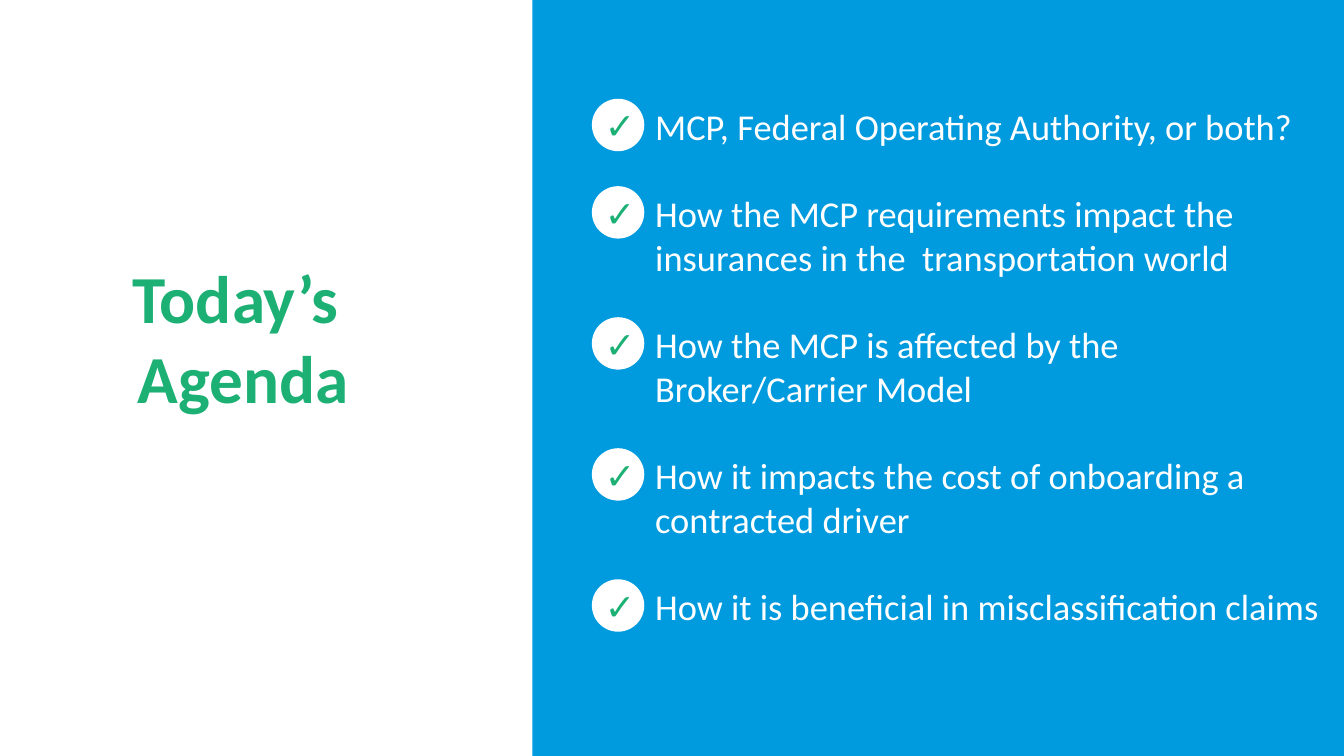
import pptx
import pptx.util
import pptx.dml.color
import pptx.enum.shapes
import pptx.enum.text
from lxml import etree

# Content
TITLE = ["Today’s ", "Agenda"]
AGENDA = [  # text, number of lines it fills
    ("MCP, Federal Operating Authority, or both?\u00a0", 1),
    ("How the MCP requirements impact the insurances in the\u00a0\u00a0transportation world", 2),
    ("How the MCP is affected by the Broker/Carrier Model", 2),
    ("How it impacts the cost of onboarding a contracted driver", 2),
    ("How it is beneficial in misclassification claims", 1),
]
COLORS = {"green": "1DB075", "blue": "009ADE", "white": "FFFFFF"}
FONT = "Calibri"

# Layout, in inches
WIDTH, HEIGHT = 13.33, 7.5
PANEL_LEFT = 5.28
DISC_LEFT, DISC_TOP, DISC = 5.87, 0.98, 0.52
LINE = 31.2 / 72  # height of one agenda line
INDENT = 0.5

inch = pptx.util.Inches
shapes_enum = pptx.enum.shapes.MSO_SHAPE

prs = pptx.Presentation()
prs.slide_width, prs.slide_height = inch(WIDTH), inch(HEIGHT)
s = prs.slides.add_slide(prs.slide_layouts[6])


def rgb(name):
    return pptx.dml.color.RGBColor.from_string(COLORS[name])


def add_filled(kind, left, top, width, height, color):
    sp = s.shapes.add_shape(kind, inch(left), inch(top), inch(width), inch(height))
    sp.shadow.inherit = False
    sp.fill.solid()
    sp.fill.fore_color.rgb = rgb(color)
    sp.line.fill.background()


def add_text(left, top, width, height, lines, size, color, bold=False):
    sp = s.shapes.add_textbox(inch(left), inch(top), inch(width), inch(height))
    tf = sp.text_frame
    tf.word_wrap = True
    tf.vertical_anchor = pptx.enum.text.MSO_ANCHOR.BOTTOM
    tf.text = "\n".join(lines)
    for p in tf.paragraphs:
        for r in p.runs:
            r.font.name, r.font.size, r.font.bold = FONT, pptx.util.Pt(size), bold
            r.font.color.rgb = rgb(color)
    return tf


def add_check(p):
    pPr = p._p.get_or_add_pPr()
    pPr.set("marL", str(inch(INDENT)))
    pPr.set("indent", str(-inch(INDENT)))
    ns = pptx.oxml.ns.qn
    color = etree.SubElement(pPr, ns("a:buClr"))
    etree.SubElement(color, ns("a:srgbClr")).set("val", COLORS["green"])
    etree.SubElement(pPr, ns("a:buFont")).set("typeface", "Segoe UI Symbol")
    etree.SubElement(pPr, ns("a:buChar")).set("char", "✓")


# Title
title = add_text(-0.75, 0.89, 6.32, 3.3, TITLE, 48, "green", bold=True)
for p in title.paragraphs:
    p.alignment = pptx.enum.text.PP_ALIGN.CENTER

# Blue panel
add_filled(shapes_enum.RECTANGLE, PANEL_LEFT, 0, WIDTH - PANEL_LEFT, HEIGHT, "blue")

# White discs, one beside the first line of each item
top = DISC_TOP
for text, lines in AGENDA:
    add_filled(shapes_enum.OVAL, DISC_LEFT, top, DISC, DISC, "white")
    top += (lines + 1) * LINE

# Agenda items, one line apart
agenda = add_text(5.9, -2, 7.43, 8.28, [text for text, lines in AGENDA], 26, "white")
for i, p in enumerate(agenda.paragraphs):
    add_check(p)
    p.line_spacing = inch(LINE)
    if i:
        p.space_before = inch(LINE)

prs.save("out.pptx")
